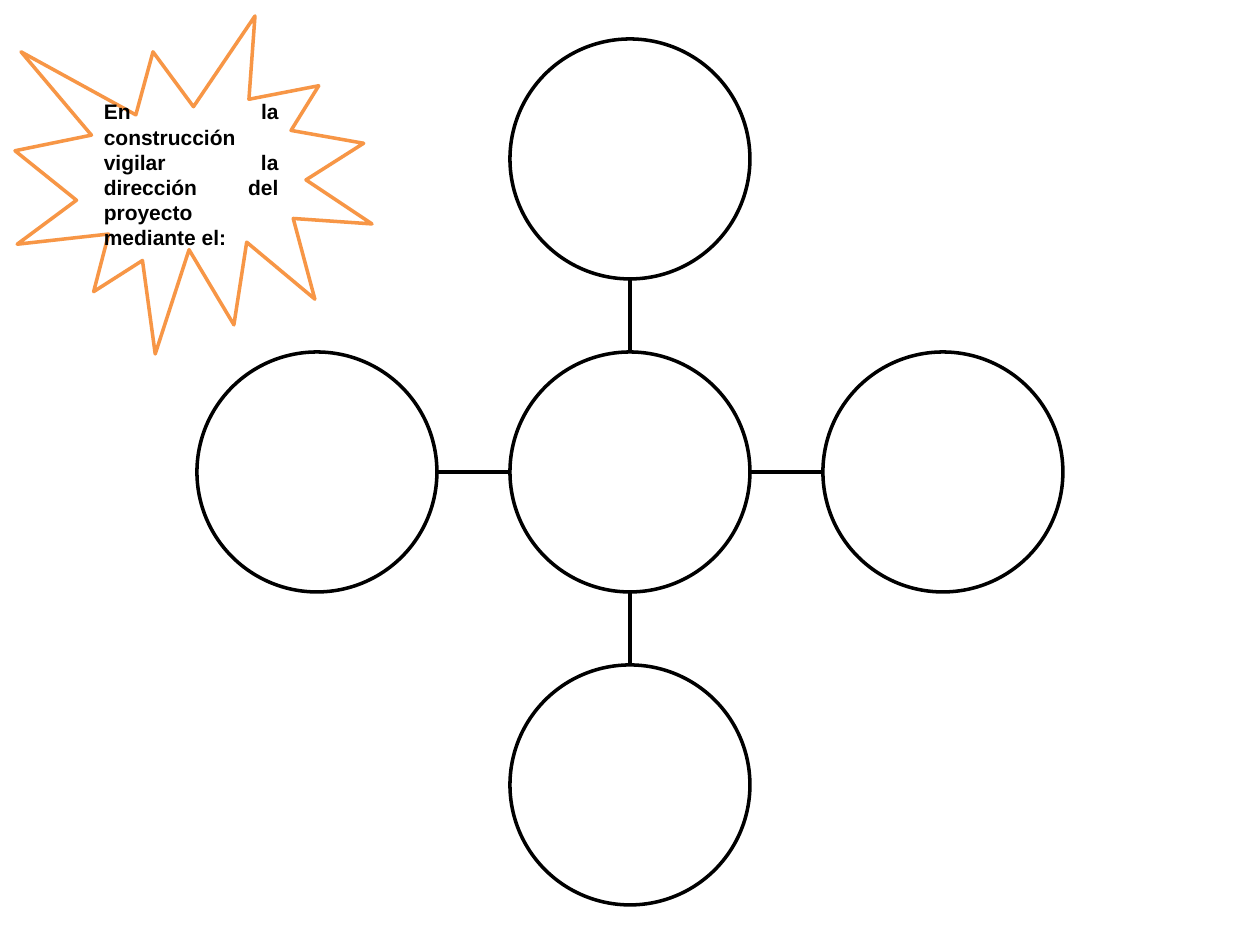
from pptx import Presentation, util as u
from pptx.dml.color import RGBColor
from pptx.enum import shapes, text
from pptx.oxml.ns import qn
from lxml import etree

PX = 914400 // 126
BLACK, WHITE, ORANGE = "000000", "FFFFFF", "F79646"

WARNING = "En la construcción vigilar la dirección del proyecto mediante el:"
WARNING_BOX = (15, 16, 357, 338)
WARNING_FONT = {"name": "Arial", "size": u.Pt(12), "bold": True}

HUB = (630, 472)
RADIUS = 120
STEP = 313  # between the centres of the hub and each outer circle
DIRECTIONS = [(0, -1), (1, 0), (0, 1), (-1, 0)]


def rgb(color):
    return RGBColor.from_string(color)


def set_line(part, color):
    part.line.color.rgb = rgb(color)
    part.line.width = u.Pt(2)


def add_outline(slide, kind, box, color):
    """Add a white preset shape with a coloured outline."""
    outline = slide.shapes.add_shape(kind, *(v * PX for v in box))
    outline.shadow.inherit = False
    outline.fill.solid()
    outline.fill.fore_color.rgb = rgb(WHITE)
    set_line(outline, color)
    return outline


def add_circle(slide, x, y):
    box = (x - RADIUS, y - RADIUS, 2 * RADIUS, 2 * RADIUS)
    add_outline(slide, shapes.MSO_SHAPE.OVAL, box, BLACK)


def add_spoke(slide, dx, dy):
    """Join the rim of the hub to the rim of the outer circle."""
    x, y = HUB
    ends = [v * PX for reach in (RADIUS, STEP - RADIUS)
            for v in (x + dx * reach, y + dy * reach)]
    spoke = slide.shapes.add_connector(shapes.MSO_CONNECTOR.STRAIGHT, *ends)
    set_line(spoke, BLACK)
    etree.SubElement(spoke._element.spPr, qn("a:effectLst"))


def add_warning(slide):
    burst = add_outline(slide, shapes.MSO_SHAPE.EXPLOSION1, WARNING_BOX, ORANGE)
    frame = burst.text_frame
    frame.word_wrap = True
    frame.vertical_anchor = text.MSO_ANCHOR.MIDDLE
    paragraph = frame.paragraphs[0]
    paragraph.alignment = text.PP_ALIGN.JUSTIFY
    run = paragraph.add_run()
    run.text = WARNING
    for key, value in WARNING_FONT.items():
        setattr(run.font, key, value)
    run.font.color.rgb = rgb(BLACK)


def main():
    deck = Presentation()
    deck.slide_width, deck.slide_height = u.Inches(10), u.Inches(7.5)
    slide = deck.slides.add_slide(deck.slide_layouts[6])
    add_circle(slide, *HUB)
    for dx, dy in DIRECTIONS:
        add_spoke(slide, dx, dy)
        add_circle(slide, HUB[0] + dx * STEP, HUB[1] + dy * STEP)
    add_warning(slide)
    deck.save("out.pptx")


if __name__ == "__main__":
    main()
